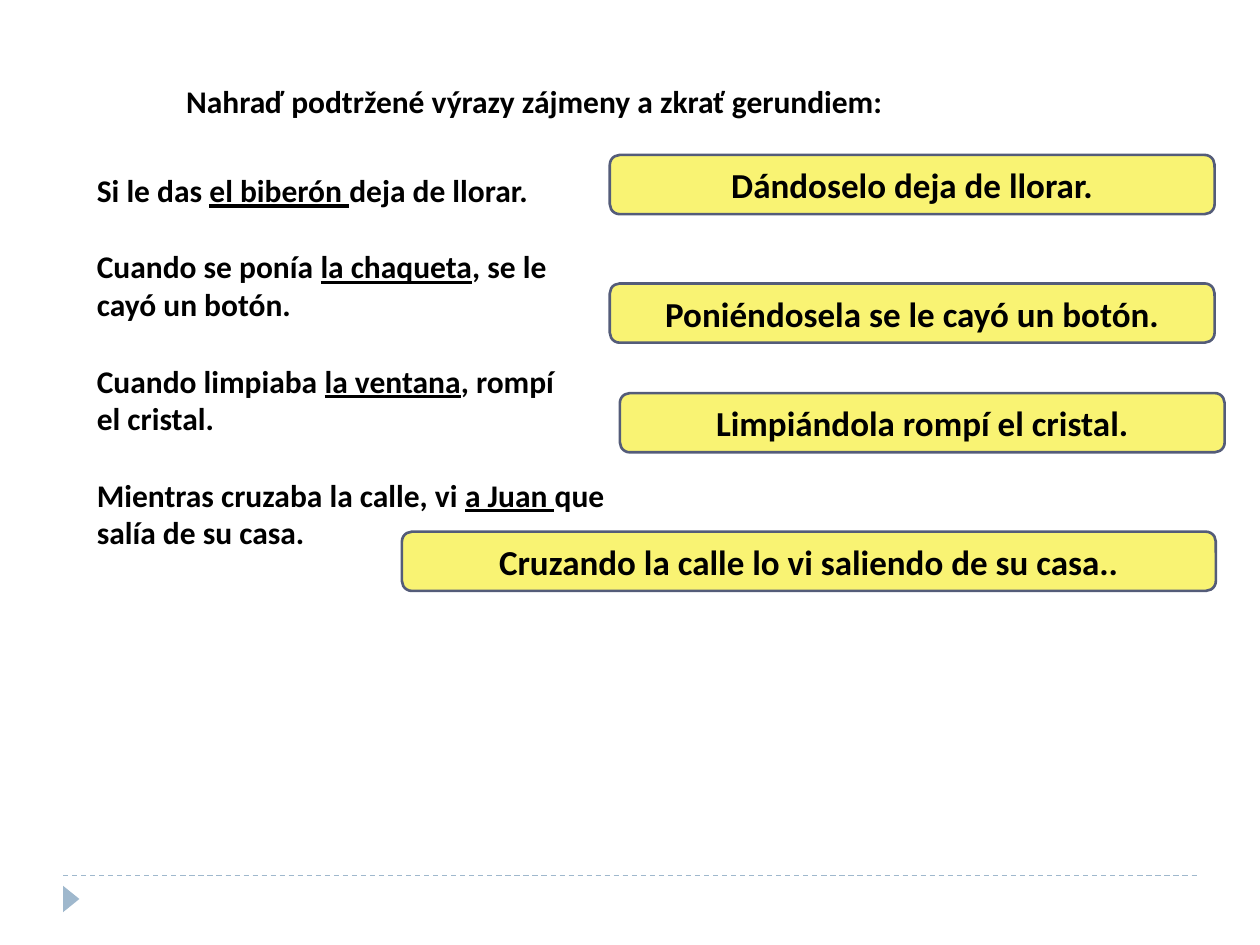
import dataclasses

import pptx
import pptx.dml.color
import pptx.enum.dml
import pptx.enum.shapes
import pptx.enum.text
import pptx.oxml
import pptx.oxml.ns
import pptx.util

Inches = pptx.util.Inches
Shapes = pptx.enum.shapes.MSO_SHAPE


@dataclasses.dataclass(frozen=True)
class Theme:
    font: str = "Calibri"
    text: str = "000000"
    answer_fill: str = "F9F373"
    answer_line: str = "545C79"
    accent: str = "9FB8CD"
    body_size: int = 18
    answer_size: int = 20
    sentence_gap: int = 22
    answer_border: float = 1.5
    footer_border: float = 0.75


class ExerciseSlide:
    """Draws the elements of a grammar exercise on one slide in one theme."""

    def __init__(self, page, theme):
        self.page = page
        self.theme = theme

    def color(self, value):
        return pptx.dml.color.RGBColor.from_string(value)

    def add_spans(self, para, marked_text, size):
        for index, text in enumerate(marked_text.split("_")):
            span = para.add_run()
            span.text = text
            span.font.color.rgb = self.color(self.theme.text)
            formats = {
                "name": self.theme.font,
                "size": pptx.util.Pt(size),
                "bold": True,
                "underline": index % 2 == 1,
            }
            for name, value in formats.items():
                setattr(span.font, name, value)

    def text(self, place, sentences):
        box = self.page.shapes.add_textbox(*map(Inches, place))
        frame = box.text_frame
        frame.word_wrap = True
        para = frame.paragraphs[0]
        for number, lines in enumerate(sentences):
            for row, line in enumerate(lines):
                if number or row:
                    para = frame.add_paragraph()
                if number and row == 0:
                    para.space_before = pptx.util.Pt(self.theme.sentence_gap)
                self.add_spans(para, line, self.theme.body_size)

    def shape(self, kind, place, fill):
        shape = self.page.shapes.add_shape(kind, *map(Inches, place))
        shape.shadow.inherit = False
        shape.fill.solid()
        shape.fill.fore_color.rgb = self.color(fill)
        return shape

    def answer(self, place, text):
        box = self.shape(Shapes.ROUNDED_RECTANGLE, place, self.theme.answer_fill)
        box.line.color.rgb = self.color(self.theme.answer_line)
        box.line.width = pptx.util.Pt(self.theme.answer_border)
        frame = box.text_frame
        frame.word_wrap = True
        frame.vertical_anchor = pptx.enum.text.MSO_ANCHOR.MIDDLE
        para = frame.paragraphs[0]
        para.alignment = pptx.enum.text.PP_ALIGN.CENTER
        self.add_spans(para, text, self.theme.answer_size)

    def footer_line(self, left, right, top):
        rule = self.page.shapes.add_connector(
            pptx.enum.shapes.MSO_CONNECTOR.STRAIGHT,
            Inches(left), Inches(top), Inches(right), Inches(top),
        )
        rule.line.color.rgb = self.color(self.theme.accent)
        rule.line.width = pptx.util.Pt(self.theme.footer_border)
        rule.line.dash_style = pptx.enum.dml.MSO_LINE.DASH
        properties = rule._element.spPr
        properties.append(pptx.oxml.parse_xml(
            f"<a:effectLst {pptx.oxml.ns.nsdecls('a')}/>"
        ))

    def footer_marker(self, place):
        marker = self.shape(Shapes.ISOSCELES_TRIANGLE, place, self.theme.accent)
        marker.rotation = 90
        marker.line.fill.background()


def main():
    deck = pptx.Presentation()
    deck.slide_width, deck.slide_height = Inches(10), Inches(7.5)
    page = deck.slides.add_slide(deck.slide_layouts[6])
    exercise = ExerciseSlide(page, Theme())

    exercise.footer_line(0.5, 9.5, 6.95)
    exercise.footer_marker((0.46, 7.07, 0.21, 0.13))
    exercise.text((0.67, 1.31, 4.78, 3.74), [
        ["Si le das _el biberón _deja de llorar."],
        ["Cuando se ponía _la chaqueta_, se le", "cayó un botón."],
        ["Cuando limpiaba _la ventana_, rompí", "el cristal."],
        ["Mientras cruzaba la calle, vi _a Juan _que", "salía de su casa."],
    ])
    answers = [
        (4.84, 1.23, 4.8, "Dándoselo deja de llorar."),
        (4.84, 2.25, 4.8, "Poniéndosela se le cayó un botón."),
        (4.92, 3.12, 4.8, "Limpiándola rompí el cristal."),
        (3.19, 4.22, 6.46, "Cruzando la calle lo vi saliendo de su casa.."),
    ]
    for left, top, width, text in answers:
        exercise.answer((left, top, width, 0.47), text)
    exercise.text((1.38, 0.6, 6.64, 0.4), [
        ["Nahraď podtržené výrazy zájmeny a zkrať gerundiem:"],
    ])

    deck.save("out.pptx")


if __name__ == "__main__":
    main()
